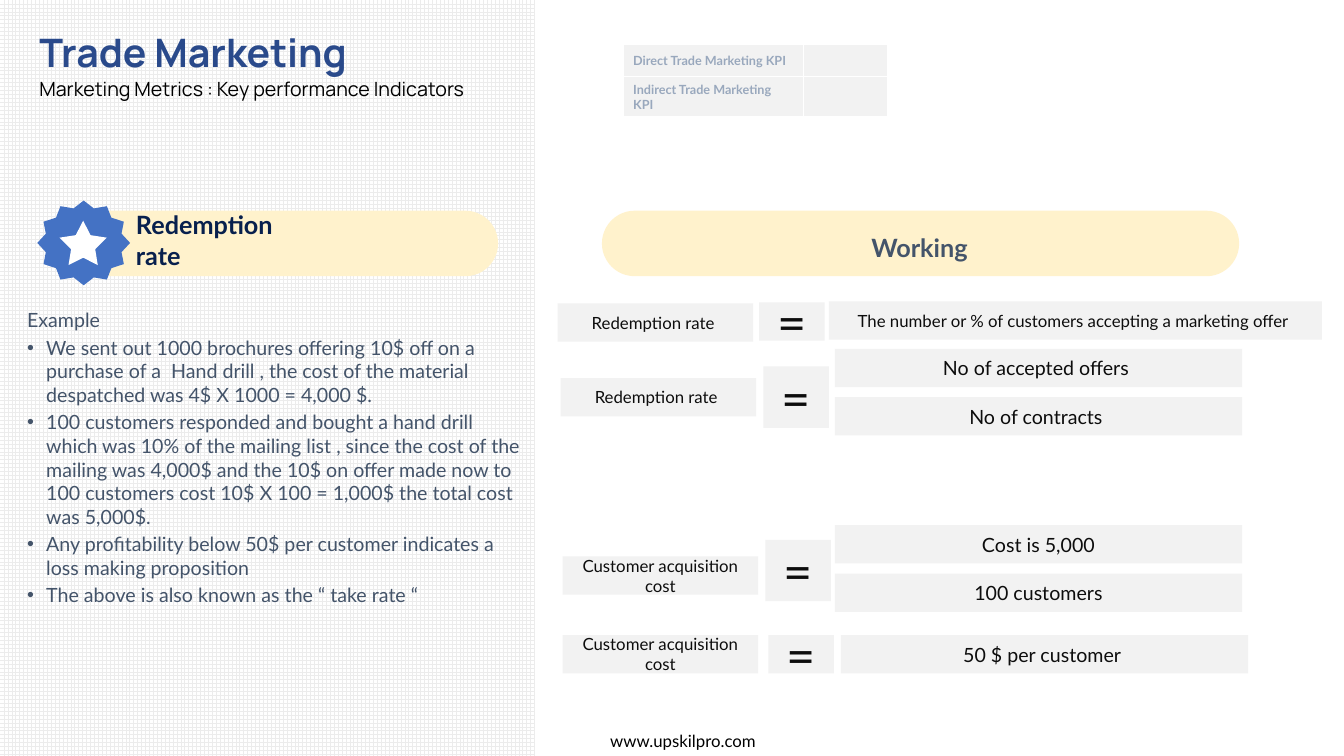
from lxml.etree import SubElement
from pptx import Presentation
from pptx.dml.color import RGBColor
from pptx.enum.dml import MSO_PATTERN
from pptx.enum.shapes import MSO_SHAPE
from pptx.enum.text import MSO_ANCHOR, MSO_AUTO_SIZE, PP_ALIGN
from pptx.oxml.ns import qn
from pptx.util import Inches, Pt

WIDTH, HEIGHT = 13.33, 7.5
PANEL_WIDTH = 5.31
BAR_HEIGHT = 0.65
CELL_HEIGHT, CELL_GAP = 0.38, 0.1
TERM_WIDTH, EQUALS_WIDTH = 1.94, 0.65

WHITE = RGBColor(0xFF, 0xFF, 0xFF)
BLACK = RGBColor(0, 0, 0)
INK = RGBColor(0x0D, 0x0D, 0x0D)
GRID_GREY = RGBColor(0xEC, 0xEC, 0xEC)
CELL_GREY = RGBColor(0xF2, 0xF2, 0xF2)
CREAM = RGBColor(0xFF, 0xF2, 0xCC)
BLUE = RGBColor(0x44, 0x72, 0xC4)
TITLE_BLUE = RGBColor(0x2A, 0x4A, 0x8B)
NAVY = RGBColor(0x08, 0x20, 0x4D)
SLATE = RGBColor(0x44, 0x54, 0x6A)
PALE_SLATE = RGBColor(0x99, 0xA8, 0xBD)

EXAMPLE = [
    "We sent out 1000 brochures offering 10$ off on a purchase of a  Hand drill , "
    "the cost of the material despatched was 4$ X 1000 = 4,000 $.",
    "100 customers responded and bought a hand drill which was 10% of the mailing list , "
    "since the cost of the mailing was 4,000$ and the 10$ on offer made now to 100 customers "
    "cost 10$ X 100 = 1,000$ the total cost was 5,000$.",
    "Any profitability below 50$ per customer indicates a loss making proposition",
    "The above is also known as the “ take rate “",
]

# Lefts and middles of term, equals sign and result; equals height; result width and size
FORMULAS = [
    ((5.53, 7.53, 8.22), (3.2, 3.19, 3.18), 0.38, 4.89, 12, "Redemption rate ",
     ["The number or % of customers accepting a marketing offer "]),
    ((5.56, 7.57, 8.28), (3.94, 3.94, 3.89), 0.61, 4.04, 14, "Redemption rate ",
     ["No of accepted offers ", "No of contracts "]),
    ((5.58, 7.59, 8.28), (5.71, 5.66, 5.64), 0.61, 4.04, 14, "Customer acquisition cost",
     ["Cost is 5,000", "100 customers"]),
    ((5.58, 7.62, 8.34), (6.49, 6.49, 6.49), 0.38, 4.04, 14, "Customer acquisition cost",
     ["50 $ per customer "]),
]


def style(paragraph, size, color, bold=False, align=PP_ALIGN.LEFT, name="Lato"):
    paragraph.alignment = align
    font = paragraph.font
    font.name, font.size, font.bold = name, Pt(size), bold
    font.color.rgb = color


def add_block(shapes, kind, box, color):
    shape = shapes.add_shape(kind, *map(Inches, box))
    shape.shadow.inherit = False
    shape.line.fill.background()
    shape.fill.solid()
    shape.fill.fore_color.rgb = color
    return shape


def add_pill(shapes, box):
    add_block(shapes, MSO_SHAPE.ROUNDED_RECTANGLE, box, CREAM).adjustments[0] = 0.5


def add_label(shapes, box, text, size, color, bold=False, align=PP_ALIGN.CENTER):
    frame = shapes.add_textbox(*map(Inches, box)).text_frame
    frame.word_wrap = True
    frame.vertical_anchor = MSO_ANCHOR.MIDDLE
    frame.text = text
    style(frame.paragraphs[0], size, color, bold, align)


def add_cell(shapes, box, text, size):
    frame = add_block(shapes, MSO_SHAPE.RECTANGLE, box, CELL_GREY).text_frame
    frame.text = text
    frame.vertical_anchor = MSO_ANCHOR.MIDDLE
    style(frame.paragraphs[0], size, INK, align=PP_ALIGN.CENTER)


def add_panel(slide, box):
    panel = add_block(slide.shapes, MSO_SHAPE.RECTANGLE, box, WHITE)
    panel.fill.patterned()
    panel.fill.pattern = MSO_PATTERN.LARGE_GRID
    panel.fill.fore_color.rgb = GRID_GREY
    panel.fill.back_color.rgb = WHITE


def place_title(slide, box):
    title = slide.shapes.title
    title.left, title.top, title.width, title.height = map(Inches, box)
    title.element.getparent().append(title.element)  # in front of the panel
    frame = title.text_frame
    frame.auto_size = MSO_AUTO_SIZE.NONE
    frame.vertical_anchor = MSO_ANCHOR.TOP
    frame.text = "Trade Marketing\nMarketing Metrics : Key performance Indicators"
    heading, subtitle = frame.paragraphs
    style(heading, 28, TITLE_BLUE, True, name="Manrope")
    style(subtitle, 14, BLACK, name="Manrope")
    subtitle.line_spacing = 1.07


def add_badge_heading(slide, box, text):
    left, top, width, height = box
    shapes = slide.shapes.add_group_shape().shapes
    add_pill(shapes, (left + 0.15, top + 0.1, width - 0.15, BAR_HEIGHT))
    seal = add_block(shapes, MSO_SHAPE.STAR_12_POINT, (left, top, 0.92, height), BLUE)
    seal.adjustments[0] = 0.422
    star = add_block(shapes, MSO_SHAPE.STAR_5_POINT, (left + 0.22, top + 0.2, 0.47, 0.44), WHITE)
    star.adjustments[0] = 0.254
    add_label(shapes, (left + 0.88, top + 0.19, 1.95, 0.4), text, 18, NAVY, True, PP_ALIGN.LEFT)


def add_example(slide, box):
    frame = slide.shapes.add_textbox(*map(Inches, box)).text_frame
    frame.word_wrap = True
    frame.text = "\n".join(["Example", *EXAMPLE])
    for index, paragraph in enumerate(frame.paragraphs):
        if index:
            paragraph.space_before = Pt(2.8)
            properties = paragraph._p.get_or_add_pPr()
            properties.set("marL", str(Inches(0.19)))
            properties.set("indent", str(-Inches(0.19)))
            SubElement(properties, qn("a:buFont"), typeface="Arial")
            SubElement(properties, qn("a:buChar"), char="•")
        style(paragraph, 14, SLATE)


def add_kpi_table(slide, box):
    table = slide.shapes.add_table(2, 2, *map(Inches, box)).table
    for column, width in zip(table.columns, (1.79, 0.83)):
        column.width = Inches(width)
    for row, text in enumerate(("Direct Trade Marketing KPI", "Indirect Trade Marketing KPI")):
        table.cell(row, 0).text = text
    for cell in table.iter_cells():
        cell.fill.solid()
        cell.fill.fore_color.rgb = CELL_GREY
        cell.vertical_anchor = MSO_ANCHOR.MIDDLE
        style(cell.text_frame.paragraphs[0], 9, PALE_SLATE, True)


def add_formula(slide, lefts, middles, equals_height, result_width, result_size, term, results):
    shapes = slide.shapes
    term_left, equals_left, result_left = lefts
    term_middle, equals_middle, result_middle = middles
    add_cell(shapes, (term_left, term_middle - CELL_HEIGHT / 2, TERM_WIDTH, CELL_HEIGHT), term, 12)
    add_cell(shapes, (equals_left, equals_middle - equals_height / 2, EQUALS_WIDTH, equals_height),
             "=", 36)
    pitch = CELL_HEIGHT + CELL_GAP
    top = result_middle - (len(results) * pitch - CELL_GAP) / 2
    for index, result in enumerate(results):
        add_cell(shapes, (result_left, top + index * pitch, result_width, CELL_HEIGHT),
                 result, result_size)


def main():
    presentation = Presentation()
    presentation.slide_width, presentation.slide_height = Inches(WIDTH), Inches(HEIGHT)
    slide = presentation.slides.add_slide(presentation.slide_layouts[5])
    add_panel(slide, (0, 0, PANEL_WIDTH, HEIGHT))
    place_title(slide, (0.29, 0.23, 8.7, 0.82))
    add_badge_heading(slide, (0.37, 1.99, 4.57, 0.84), "Redemption rate")
    add_example(slide, (0.17, 3.01, 5.14, 3.69))
    add_kpi_table(slide, (6.18, 0.44, 2.62, 0.64))
    add_pill(slide.shapes, (5.97, 2.09, 6.32, BAR_HEIGHT))
    add_label(slide.shapes, (6.24, 2.26, 5.82, 0.4), "Working ", 18, SLATE, True)
    for formula in FORMULAS:
        add_formula(slide, *formula)
    add_label(slide.shapes, (5.4, 7.2, 2.75, 0.3), "www.upskilpro.com", 12, BLACK)
    presentation.save("out.pptx")


if __name__ == "__main__":
    main()
